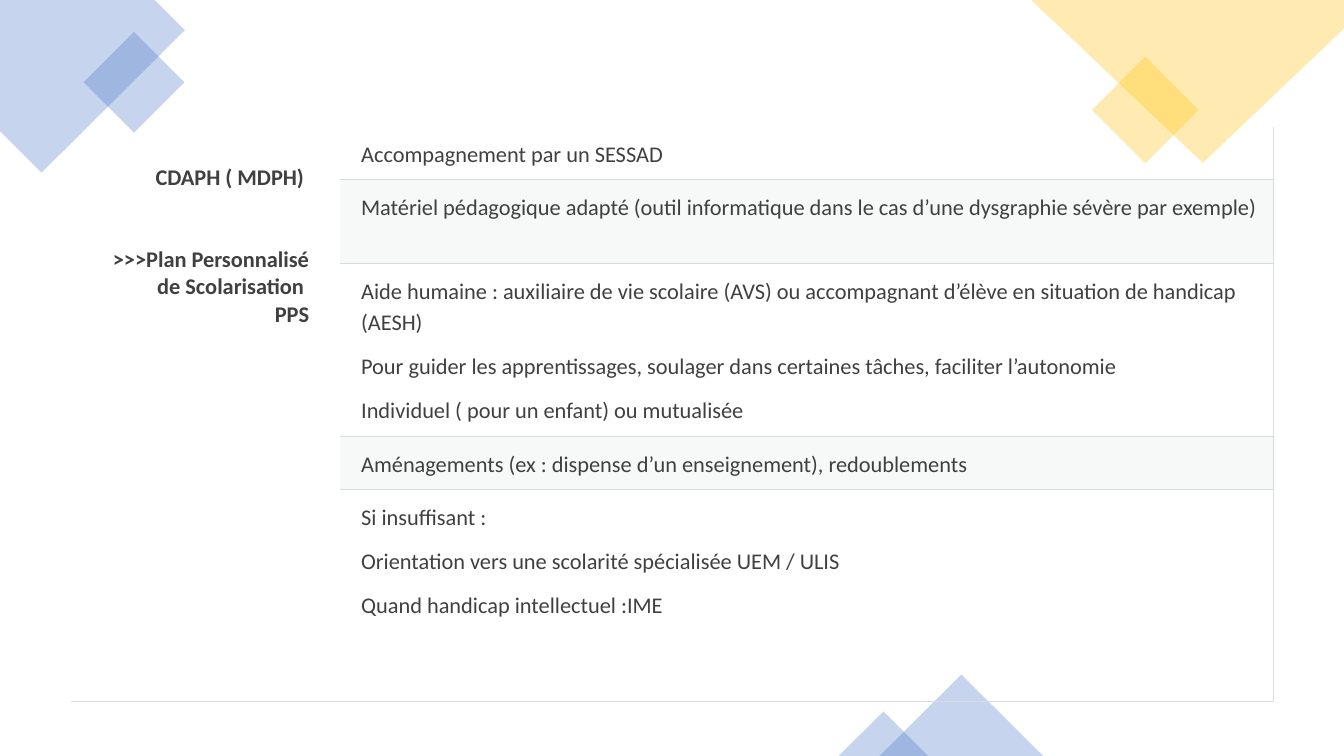
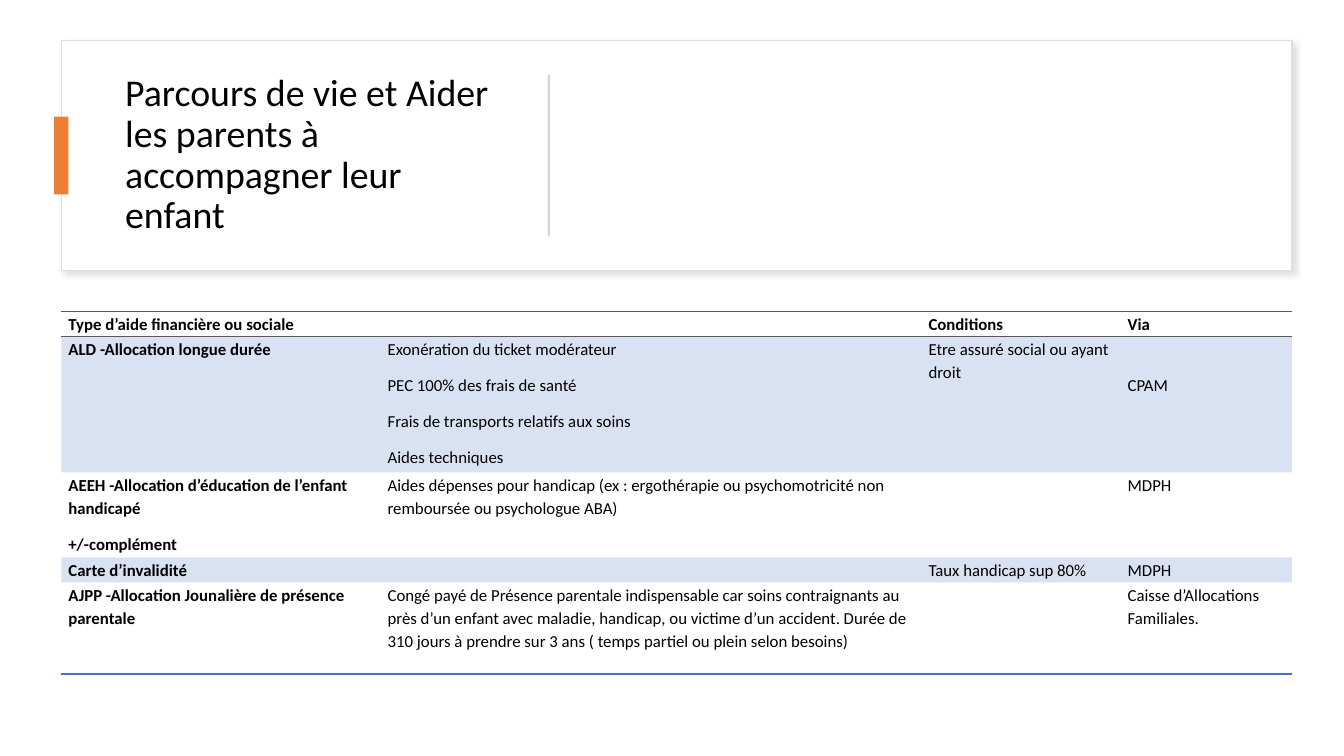
"""Build two slides on school support plans and family allowances."""
from dataclasses import dataclass
from typing import Optional

from lxml import etree
from pptx import Presentation
from pptx import util as u
from pptx.dml.color import RGBColor
from pptx.enum import shapes, text
from pptx.oxml import ns


@dataclass(frozen=True)
class Theme:
    """Colours, type sizes and font shared by the slides."""
    font: str = "Calibri"
    blue: str = "4472C4"
    yellow: str = "FFC000"
    orange: str = "ED7D31"
    white: str = "FFFFFF"
    black: str = "000000"
    ink: str = "404040"
    rule: str = "D8DCDC"
    band: str = "D8DEDC"
    header_rule: str = "595959"
    card_line: str = "DEDEDE"
    divider: str = "D5D5D5"
    shadow: str = "C5C3C3"
    title_size: int = 27
    plan_size: int = 16
    aid_size: int = 12
    ornament_alpha: int = 30
    band_alpha: int = 20


THEME = Theme()
COLUMNS, ROWS = 160, 90
MODULE = u.Pt(6)
PLAIN_TABLE = "{2D5ABB26-0587-4C30-8999-92F81FD0307C}"


@dataclass(frozen=True)
class Box:
    """A rectangle in grid columns and rows."""
    left: float
    top: float
    width: float
    height: float

    def emu(self) -> list:
        """Return left, top, width and height as lengths."""
        return [grid(value) for value in (self.left, self.top, self.width, self.height)]


@dataclass(frozen=True)
class Ornament:
    """A translucent preset shape."""
    kind: shapes.MSO_SHAPE
    box: Box
    color: str


@dataclass(frozen=True)
class Corner:
    """A translucent outline cut by the slide edge."""
    points: tuple
    color: str


@dataclass(frozen=True)
class Border:
    """One cell edge: L, R, T or B."""
    side: str
    color: str
    width: float = 0.75


@dataclass(frozen=True)
class CellStyle:
    """Look of the text and the box of a table cell."""
    size: int
    color: str
    margins: tuple
    bold: bool = False
    align: text.PP_ALIGN = text.PP_ALIGN.LEFT
    line_spacing: float = 1.0
    space_after: float = 0
    space_before: float = 0
    fill: Optional[str] = None
    borders: tuple = ()


ORNAMENTS = (
    Ornament(shapes.MSO_SHAPE.DIAMOND, Box(9.95, 3.8, 12, 12), THEME.blue),
    Ornament(shapes.MSO_SHAPE.DIAMOND, Box(130, 6.75, 12.7, 12.7), THEME.yellow),
    Ornament(shapes.MSO_SHAPE.ISOSCELES_TRIANGLE, Box(104.7, 80.3, 19.5, 9.7), THEME.blue),
    Ornament(shapes.MSO_SHAPE.ISOSCELES_TRIANGLE, Box(99.85, 84.7, 10.65, 5.3), THEME.blue),
)
CORNERS = (
    Corner(((0, 0), (18.4, 0), (22, 3.6), (4.95, 20.55), (0, 15.6)), THEME.blue),
    Corner(((COLUMNS, 0), (122.75, 0), (143.2, 19.4), (COLUMNS, 3.4)), THEME.yellow),
)
PLAN_HEADING = "CDAPH ( MDPH) \n>>>Plan Personnalisé de Scolarisation \nPPS"
PLAN_MEASURES = (
    "Accompagnement par un SESSAD",
    "Matériel pédagogique adapté (outil informatique dans le cas d’une dysgraphie sévère par exemple)",
    "Aide humaine : auxiliaire de vie scolaire (AVS) ou accompagnant d’élève en situation de handicap (AESH)\n"
    "Pour guider les apprentissages, soulager dans certaines tâches, faciliter l’autonomie\n"
    "Individuel ( pour un enfant) ou mutualisée",
    "Aménagements (ex : dispense d’un enseignement), redoublements",
    "Si insuffisant :\nOrientation vers une scolarité spécialisée UEM / ULIS\nQuand handicap intellectuel :IME",
)
AID_TITLE = "Parcours de vie et Aider les parents à accompagner leur enfant"
AIDS = (
    ("Type d’aide financière ou sociale", "", "Conditions", "Via"),
    ("ALD -Allocation longue durée",
     "Exonération du ticket modérateur\nPEC 100% des frais de santé\n"
     "Frais de transports relatifs aux soins\nAides techniques",
     "Etre assuré social ou ayant droit", "CPAM"),
    ("AEEH -Allocation d’éducation de l’enfant handicapé\n+/-complément",
     "Aides dépenses pour handicap (ex : ergothérapie ou psychomotricité non remboursée "
     "ou psychologue ABA)", "", "MDPH"),
    ("Carte d’invalidité", "", "Taux handicap sup 80%", "MDPH"),
    ("AJPP -Allocation Jounalière de présence parentale",
     "Congé payé de Présence parentale indispensable car soins contraignants au près d’un enfant "
     "avec maladie, handicap, ou victime d’un accident. Durée de 310 jours à prendre sur 3 ans "
     "( temps partiel ou plein selon besoins)", "", "Caisse d’Allocations Familiales."),
)


def grid(value: float) -> u.Emu:
    """Turn grid modules into a length."""
    return u.Emu(round(value * MODULE))


def rgb(color: str) -> RGBColor:
    """Turn a hex string into a colour."""
    return RGBColor.from_string(color)


def add_alpha(color_element, percent: float) -> None:
    """Make a colour element translucent."""
    etree.SubElement(color_element, ns.qn("a:alpha"), val=str(round(percent * 1000)))


def paint(fill, holder, color: str, alpha: int = 100) -> None:
    """Fill with a solid colour, translucent if asked."""
    fill.solid()
    fill.fore_color.rgb = rgb(color)
    if alpha < 100:
        add_alpha(holder.find(ns.qn("a:solidFill"))[0], alpha)


def finish_shape(shape, color: str, alpha: int = 100) -> None:
    """Give a shape a flat fill without line or shadow."""
    shape.shadow.inherit = False
    shape.line.fill.background()
    paint(shape.fill, shape.element.spPr, color, alpha)


def add_preset(slide, kind: shapes.MSO_SHAPE, box: Box, color: str, alpha: int = 100):
    """Add a flat preset shape."""
    shape = slide.shapes.add_shape(kind, *box.emu())
    finish_shape(shape, color, alpha)
    return shape


def add_corner(slide, corner: Corner) -> None:
    """Add a translucent polygon."""
    points = [(grid(x), grid(y)) for x, y in corner.points]
    builder = slide.shapes.build_freeform(*points[0])
    builder.add_line_segments(points[1:], close=True)
    finish_shape(builder.convert_to_shape(), corner.color, THEME.ornament_alpha)


def add_card_shadow(shape) -> None:
    """Give a shape a soft shadow to the lower right."""
    effects = shape.element.spPr.find(ns.qn("a:effectLst"))
    shadow = etree.SubElement(effects, ns.qn("a:outerShdw"), blurRad=str(u.Pt(4)),
                              dist=str(u.Pt(3)), dir=str(45 * 60000), algn="tl", rotWithShape="0")
    add_alpha(etree.SubElement(shadow, ns.qn("a:srgbClr"), val=THEME.shadow), 50)


def format_runs(paragraph, size: int, color: str, bold: bool = False) -> None:
    """Apply the theme font to every run."""
    for run in paragraph.runs:
        run.font.name = THEME.font
        run.font.size = u.Pt(size)
        run.font.bold = bold
        run.font.color.rgb = rgb(color)


def add_grid_table(slide, left: float, top: float, widths: tuple, heights: tuple):
    """Add a table without any built-in style."""
    box = Box(left, top, sum(widths), sum(heights))
    frame = slide.shapes.add_table(len(heights), len(widths), *box.emu())
    table = frame.table
    table.first_row = table.horz_banding = False
    next(frame.element.iter(ns.qn("a:tableStyleId"))).text = PLAIN_TABLE
    for column, width in zip(table.columns, widths):
        column.width = grid(width)
    for row, height in zip(table.rows, heights):
        row.height = grid(height)
    return table


def add_border(properties, border: Border) -> None:
    """Draw one edge of a cell."""
    line = etree.SubElement(properties, ns.qn(f"a:ln{border.side}"), w=str(u.Pt(border.width)))
    fill = etree.SubElement(line, ns.qn("a:solidFill"))
    etree.SubElement(fill, ns.qn("a:srgbClr"), val=border.color)


def write_cell(cell, words: str, style: CellStyle) -> None:
    """Write and format a table cell."""
    cell.text_frame.text = words
    cell.margin_left, cell.margin_top, cell.margin_right, cell.margin_bottom = map(grid, style.margins)
    properties = cell.text_frame.paragraphs[0].font and cell._tc.get_or_add_tcPr()
    for border in style.borders:
        add_border(properties, border)
    if style.fill:
        paint(cell.fill, properties, style.fill, THEME.band_alpha)
    else:
        cell.fill.background()
    for index, paragraph in enumerate(cell.text_frame.paragraphs):
        paragraph.alignment = style.align
        paragraph.line_spacing = style.line_spacing
        paragraph.space_after = u.Pt(style.space_after)
        paragraph.space_before = u.Pt(style.space_before if index == 1 else 0)
        format_runs(paragraph, style.size, style.color, style.bold)
        if not words:
            etree.SubElement(paragraph._p, ns.qn("a:endParaRPr"), sz=str(style.size * 100))


def build_plan_slide(presentation) -> None:
    """Build the slide on the schooling plan."""
    slide = presentation.slides.add_slide(presentation.slide_layouts[6])
    for corner in CORNERS:
        add_corner(slide, corner)
    for ornament in ORNAMENTS:
        add_preset(slide, ornament.kind, ornament.box, ornament.color, THEME.ornament_alpha)
    table = add_grid_table(slide, 8.45, 15.1, (32.05, 111.1), (6.3, 10, 20.6, 6.3, 25.2))
    bottom = Border("B", THEME.rule)
    heading = CellStyle(THEME.plan_size, THEME.ink, (2.5, 4.45, 3.7, 1.2), bold=True,
                        align=text.PP_ALIGN.RIGHT, space_before=39, borders=(bottom,))
    table.cell(0, 0).merge(table.cell(len(PLAN_MEASURES) - 1, 0))
    write_cell(table.cell(0, 0), PLAN_HEADING, heading)
    add_border(table.cell(len(PLAN_MEASURES) - 1, 0)._tc.get_or_add_tcPr(), bottom)
    for row, words in enumerate(PLAN_MEASURES):
        style = CellStyle(THEME.plan_size, THEME.ink, (2.5, 1.2, 1.55, 1.2), line_spacing=1.15,
                          space_after=9, fill=THEME.band if row % 2 else None,
                          borders=(Border("R", THEME.band), bottom))
        write_cell(table.cell(row, 1), words, style)


def place_title(slide, words: str, box: Box) -> None:
    """Move and format the title placeholder."""
    title = slide.shapes.title
    title.left, title.top, title.width, title.height = box.emu()
    frame = title.text_frame
    frame.text = words
    frame.word_wrap = True
    frame.auto_size = text.MSO_AUTO_SIZE.NONE
    frame.vertical_anchor = text.MSO_ANCHOR.MIDDLE
    paragraph = frame.paragraphs[0]
    paragraph.alignment = text.PP_ALIGN.LEFT
    paragraph.line_spacing = 0.9
    format_runs(paragraph, THEME.title_size, THEME.black)


def aid_borders(row: int) -> tuple:
    """Return the edges ruled in a row of the allowance table."""
    if row == 0:
        return Border("T", THEME.header_rule), Border("B", THEME.header_rule)
    return (Border("B", THEME.blue, 1.5),) if row == len(AIDS) - 1 else ()


def build_aid_slide(presentation) -> None:
    """Build the slide on the allowances."""
    slide = presentation.slides.add_slide(presentation.slide_layouts[5])
    rectangle = shapes.MSO_SHAPE.RECTANGLE
    card = add_preset(slide, rectangle, Box(7.3, 4.8, 146.5, 27.4), THEME.white)
    card.line.color.rgb = rgb(THEME.card_line)
    card.line.width = u.Pt(1)
    add_card_shadow(card)
    slide.shapes.title.element.addprevious(card.element)
    place_title(slide, AID_TITLE, Box(13.7, 7.7, 46.7, 21.6))
    add_preset(slide, rectangle, Box(6.45, 13.9, 1.7, 9.25), THEME.orange)
    add_preset(slide, rectangle, Box(65.2, 8.9, 0.25, 19.2), THEME.divider)
    table = add_grid_table(slide, 7.3, 37.05, (38, 64.4, 23.7, 20.4), (3, 16.2, 10.1, 3, 10.9))
    for row, aid in enumerate(AIDS):
        for column, words in enumerate(aid):
            top = 4.3 if words == "CPAM" else 0
            style = CellStyle(THEME.aid_size, THEME.black, (0.85, top, 0.85, 0),
                              bold=row == 0 or column == 0, line_spacing=1.14, space_after=9,
                              fill=THEME.blue if row % 2 else None, borders=aid_borders(row))
            write_cell(table.cell(row, column), words, style)


def main() -> None:
    """Build and save the presentation."""
    presentation = Presentation()
    presentation.slide_width, presentation.slide_height = grid(COLUMNS), grid(ROWS)
    build_plan_slide(presentation)
    build_aid_slide(presentation)
    presentation.save("out.pptx")


if __name__ == "__main__":
    main()
